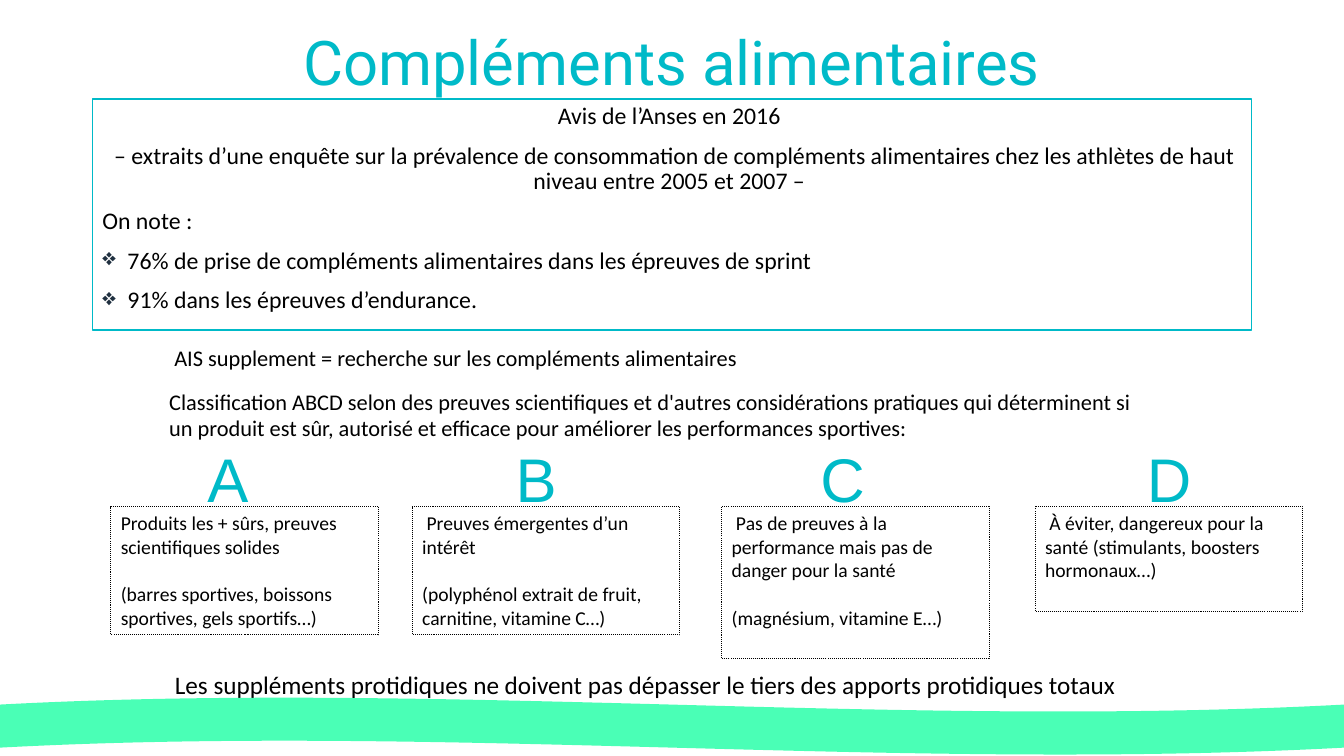
import pptx
import pptx.util
import pptx.dml.color
import pptx.enum.dml
import pptx.enum.shapes
import pptx.enum.text
import pptx.oxml.ns
import lxml.etree

Pt = pptx.util.Pt
ALIGN = pptx.enum.text.PP_ALIGN
ANCHOR = pptx.enum.text.MSO_ANCHOR
SHAPE = pptx.enum.shapes.MSO_SHAPE

# Content
TEAL, NAVY, MINT, BLACK, WHITE = "00BAC8", "203040", "4AFFB6", "000000", "FFFFFF"
TITLE = "Compléments alimentaires"
SURVEY = [  # text, alignment, bulleted
    ("Avis de l’Anses en 2016 ", ALIGN.CENTER, False),
    (" – extraits d’une enquête sur la prévalence de consommation de compléments "
     "alimentaires chez les athlètes de haut niveau entre 2005 et 2007 – ", ALIGN.CENTER, False),
    ("On note :", ALIGN.LEFT, False),
    ("76% de prise de compléments alimentaires dans les épreuves de sprint", ALIGN.LEFT, True),
    ("91% dans les épreuves d’endurance.", ALIGN.LEFT, True),
]
RESEARCH = [
    " AIS supplement = recherche sur les compléments alimentaires",
    "Classification ABCD selon des preuves scientifiques et d'autres considérations pratiques "
    "qui déterminent si un produit est sûr, autorisé et efficace pour améliorer les "
    "performances sportives:",
]
CLASSES = [  # letter, letter left, box left, box height, paragraphs
    ("A", 124.6, 79.2, 92, ["Produits les + sûrs, preuves scientifiques solides ",
                            "(barres sportives, boissons sportives, gels sportifs…)"]),
    ("B", 344.9, 294.5, 92, [" Preuves émergentes d’un intérêt",
                             "(polyphénol extrait de fruit, carnitine, vitamine C…)"]),
    ("C", 563.8, 515.5, 109, [" Pas de preuves à la performance mais pas de danger pour la santé",
                              "(magnésium, vitamine E…)"]),
    ("D", 797, 739.4, 75, [" À éviter, dangereux pour la santé (stimulants, boosters hormonaux…)"]),
]
LIMIT = (" Les suppléments protidiques ne doivent pas dépasser le tiers "
         "des apports protidiques totaux ")

deck = pptx.Presentation()
deck.slide_width, deck.slide_height = Pt(960), Pt(540)
slide = deck.slides.add_slide(deck.slide_layouts[6])


def paint(color_format, value):
    color_format.rgb = pptx.dml.color.RGBColor.from_string(value)


def add_panel(kind, left, top, width, height, fill=None, line=None, weight=1):
    panel = slide.shapes.add_shape(kind, Pt(left), Pt(top), Pt(width), Pt(height))
    panel.shadow.inherit = False
    if fill:
        panel.fill.solid()
        paint(panel.fill.fore_color, fill)
    else:
        panel.fill.background()
    if line:
        paint(panel.line.color, line)
        panel.line.width = Pt(weight)
    else:
        panel.line.fill.background()
    return panel


def add_label(left, top, width, height):
    return slide.shapes.add_textbox(Pt(left), Pt(top), Pt(width), Pt(height))


def add_bullet(paragraph):
    props = paragraph._p.get_or_add_pPr()
    props.set("marL", str(Pt(18)))
    props.set("indent", str(-Pt(18)))
    qn = pptx.oxml.ns.qn
    bullet_color = lxml.etree.SubElement(props, qn("a:buClr"))
    lxml.etree.SubElement(bullet_color, qn("a:srgbClr")).set("val", NAVY)
    lxml.etree.SubElement(props, qn("a:buChar")).set("char", "❖")


def write(holder, lines, size, font="Calibri", color=BLACK, anchor=ANCHOR.TOP,
          gap=0, spacing=None):
    frame = holder.text_frame
    frame.word_wrap = True
    frame.vertical_anchor = anchor
    for index, (text, align, bulleted) in enumerate(lines):
        paragraph = frame.add_paragraph() if index else frame.paragraphs[0]
        if bulleted:
            add_bullet(paragraph)
        paragraph.alignment = align
        if index:
            paragraph.space_before = Pt(gap)
        if spacing:
            paragraph.line_spacing = spacing
        run = paragraph.add_run()
        run.text = text
        run.font.size, run.font.name = Pt(size), font
        paint(run.font.color, color)


def plain(texts, align=ALIGN.LEFT):
    return [(text, align, False) for text in texts]


# Title and survey
write(add_label(66, 12.2, 828, 62), plain([TITLE], ALIGN.CENTER), 44, "Roboto", TEAL,
      ANCHOR.MIDDLE)
survey_box = add_panel(SHAPE.RECTANGLE, 66, 70.6, 828, 165, WHITE, TEAL)
write(survey_box, SURVEY, 17, gap=10, spacing=0.9)

# Research introduction
write(add_label(113.8, 242, 701.3, 77.8), plain(RESEARCH, ALIGN.JUSTIFY), 16, gap=12.2)

# ABCD classes
for letter, letter_left, box_left, box_height, texts in CLASSES:
    write(add_label(letter_left, 316, 76.3, 50.4), plain([letter], ALIGN.CENTER), 44,
          "Arial", TEAL, ANCHOR.MIDDLE)
    class_box = add_panel(SHAPE.RECTANGLE, box_left, 361.5, 191, box_height,
                          line=BLACK, weight=0.75)
    class_box.line.dash_style = pptx.enum.dml.MSO_LINE.ROUND_DOT
    write(class_box, plain(texts), 14, gap=17)

# Protein limit and footer wave
write(add_label(113.8, 474.5, 787, 51), plain([LIMIT]), 18)
add_panel(SHAPE.WAVE, 0, 498.2, 960, 41, MINT)

deck.save("out.pptx")
